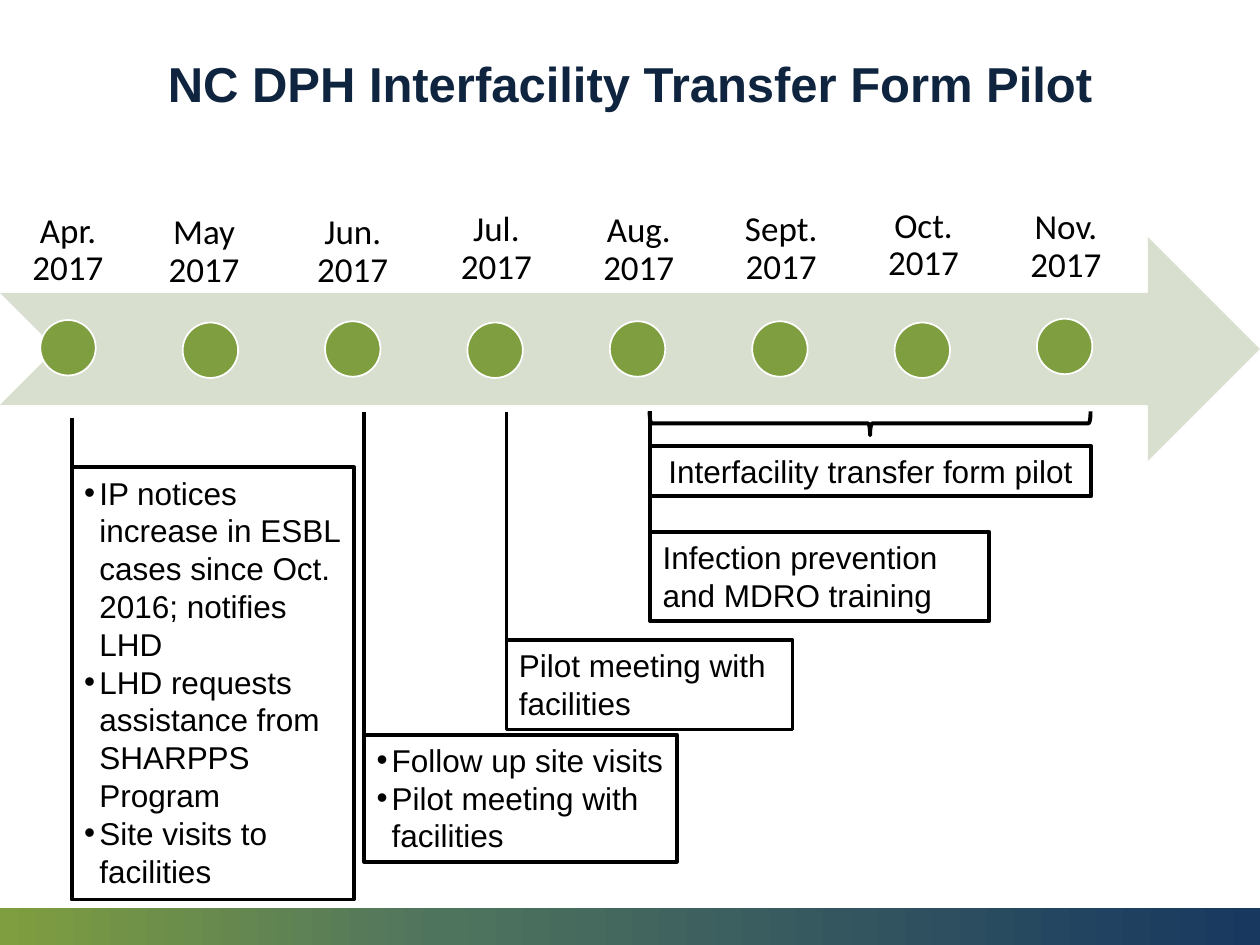
from copy import deepcopy

from pptx import Presentation
from pptx.dml.color import RGBColor
from pptx.enum.shapes import MSO_CONNECTOR, MSO_SHAPE as SHAPE
from pptx.enum.text import MSO_ANCHOR as ANCHOR, MSO_AUTO_SIZE as AUTOSIZE, PP_ALIGN as ALIGN
from pptx.oxml.ns import qn
from pptx.util import Inches, Pt

BLACK, WHITE, NAVY = "000000", "FFFFFF", "0F243E"
GREEN, PALE_GREEN = "7F9E3F", "D8DFCF"
FOOTER_STOPS = [(0, GREEN), (0.35, "4F745E"), (1, "183860")]

MONTH_STEP, DOT_SIZE = 1.13, 0.44
# month, label left, label top, label height, anchor, dot top
MONTHS = [
    ("Apr.", 0, 1.71, 0.74, ANCHOR.BOTTOM, 2.54),
    ("May", 1.08, 1.54, 0.82, ANCHOR.TOP, 2.56),
    ("Jun.", 2.26, 1.69, 0.77, ANCHOR.BOTTOM, 2.55),
    ("Jul.", 3.4, 1.52, 0.32, ANCHOR.TOP, 2.56),
    ("Aug.", 4.53, 2.14, 0.29, ANCHOR.BOTTOM, 2.55),
    ("Sept.", 5.66, 1.52, 0.51, ANCHOR.TOP, 2.55),
    ("Oct.", 6.79, 2.03, 0.38, ANCHOR.BOTTOM, 2.56),
    ("Nov.", 7.92, 1.5, 0.37, ANCHOR.TOP, 2.53),
]

# box, paragraphs, bulleted, alignment, top of the stem (None: no stem)
EVENTS = [
    ((0.57, 3.71, 2.24, 3.43),
     ["IP notices increase in ESBL cases since Oct. 2016; notifies LHD",
      "LHD requests assistance from SHARPPS Program",
      "Site visits to facilities"], True, ALIGN.LEFT, 3.32),
    ((2.89, 5.83, 2.48, 1.01),
     ["Follow up site visits", "Pilot meeting with facilities"], True, ALIGN.LEFT, 3.27),
    ((4.02, 5.08, 2.27, 0.71), ["Pilot meeting with facilities"], False, ALIGN.LEFT, 3.27),
    ((5.16, 3.54, 3.5, 0.4), ["Interfacility transfer form pilot"], False, ALIGN.CENTER, None),
    ((5.16, 4.22, 2.69, 0.71), ["Infection prevention and MDRO training"], False,
     ALIGN.LEFT, 3.26),
]


def rgb(color):
    return RGBColor.from_string(color)


def inches(values):
    return [Inches(v) for v in values]


class TimelineSlide:
    font, label_font = "Arial", "Calibri"
    line_width = Pt(2.25)

    def __init__(self, slide):
        self.slide = slide
        self.shapes = slide.shapes

    def style(self, p, size, color=BLACK, font=None, bold=False, align=ALIGN.LEFT):
        p.alignment = align
        for r in p.runs:
            r.font.name = font or self.font
            r.font.size = Pt(size)
            r.font.bold = bold
            r.font.color.rgb = rgb(color)

    def title(self, text, box):
        sp = self.shapes.title
        sp.left, sp.top, sp.width, sp.height = inches(box)
        tf = sp.text_frame
        tf.text = text
        tf.vertical_anchor = ANCHOR.MIDDLE
        tf.paragraphs[0].line_spacing = 0.9
        self.style(tf.paragraphs[0], 28, NAVY, bold=True, align=ALIGN.CENTER)

    def shape(self, kind, box, fill=None, line=None, width=None):
        sp = self.shapes.add_shape(kind, *inches(box))
        sp.shadow.inherit = False
        if fill:
            sp.fill.solid()
            sp.fill.fore_color.rgb = rgb(fill)
        else:
            sp.fill.background()
        if line:
            sp.line.color.rgb = rgb(line)
            sp.line.width = width or self.line_width
        else:
            sp.line.fill.background()
        return sp

    def gradient_bar(self, box, stops):
        sp = self.shape(SHAPE.RECTANGLE, box)
        sp.fill.gradient()
        sp.fill.gradient_angle = 0
        gs_list = sp._element.spPr.find(".//" + qn("a:gsLst"))
        while len(gs_list) < len(stops):
            gs_list.append(deepcopy(gs_list[0]))
        for stop, (position, color) in zip(sp.fill.gradient_stops, stops):
            stop.position = position
            stop.color.rgb = rgb(color)

    def label(self, text, box, anchor):
        tf = self.shapes.add_textbox(*inches(box)).text_frame
        tf.text = text
        tf.word_wrap = True
        tf.auto_size = AUTOSIZE.NONE
        tf.vertical_anchor = anchor
        tf.margin_left = tf.margin_right = tf.margin_top = tf.margin_bottom = Inches(0.16)
        tf.paragraphs[0].line_spacing = 0.9
        self.style(tf.paragraphs[0], 20, font=self.label_font, align=ALIGN.CENTER)

    def bullet(self, p):
        pPr = p._p.get_or_add_pPr()
        pPr.set("marL", str(Inches(0.12)))
        pPr.set("indent", str(-Inches(0.12)))
        pPr.makeelement(qn("a:buFont"), {})
        for tag, key, value in (("a:buFont", "typeface", self.font), ("a:buChar", "char", "•")):
            pPr.append(pPr.makeelement(qn(tag), {key: value}))

    def event_box(self, box, lines, bulleted, align):
        tf = self.shape(SHAPE.RECTANGLE, box, line=BLACK).text_frame
        tf.text = "\n".join(lines)
        tf.word_wrap = True
        tf.auto_size = AUTOSIZE.SHAPE_TO_FIT_TEXT
        tf.vertical_anchor = ANCHOR.TOP
        for p in tf.paragraphs:
            if bulleted:
                self.bullet(p)
            self.style(p, 18, align=align)

    def stem(self, x, bottom, top):
        line = self.shapes.add_connector(MSO_CONNECTOR.STRAIGHT, *inches((x, bottom, x, top)))
        line.line.color.rgb = rgb(BLACK)
        line.line.width = self.line_width
        spPr = line._element.spPr
        spPr.append(spPr.makeelement(qn("a:effectLst"), {}))


def main():
    prs = Presentation()
    prs.slide_width, prs.slide_height = Inches(10), Inches(7.5)
    s = TimelineSlide(prs.slides.add_slide(prs.slide_layouts[5]))

    s.gradient_bar((0, 7.21, 10, 0.3), FOOTER_STOPS)
    s.title("NC DPH Interfacility Transfer Form Pilot", (0.69, 0.11, 8.62, 1.16))

    s.shape(SHAPE.NOTCHED_RIGHT_ARROW, (0, 1.88, 10, 1.78), PALE_GREEN)
    for i, (month, left, top, height, anchor, dot_top) in enumerate(MONTHS):
        s.label(f"{month} 2017", (left, top, 1.08, height), anchor)
        dot = (0.32 + i * MONTH_STEP, dot_top, DOT_SIZE, DOT_SIZE)
        s.shape(SHAPE.OVAL, dot, GREEN, WHITE, Pt(1))

    for box, lines, bulleted, align, stem_top in EVENTS:
        s.event_box(box, lines, bulleted, align)
        if stem_top:
            s.stem(box[0], box[1], stem_top)
    brace = s.shape(SHAPE.RIGHT_BRACE, (6.81, 1.61, 0.19, 3.5), line=BLACK)
    brace.rotation = 90

    prs.save("out.pptx")


if __name__ == "__main__":
    main()
